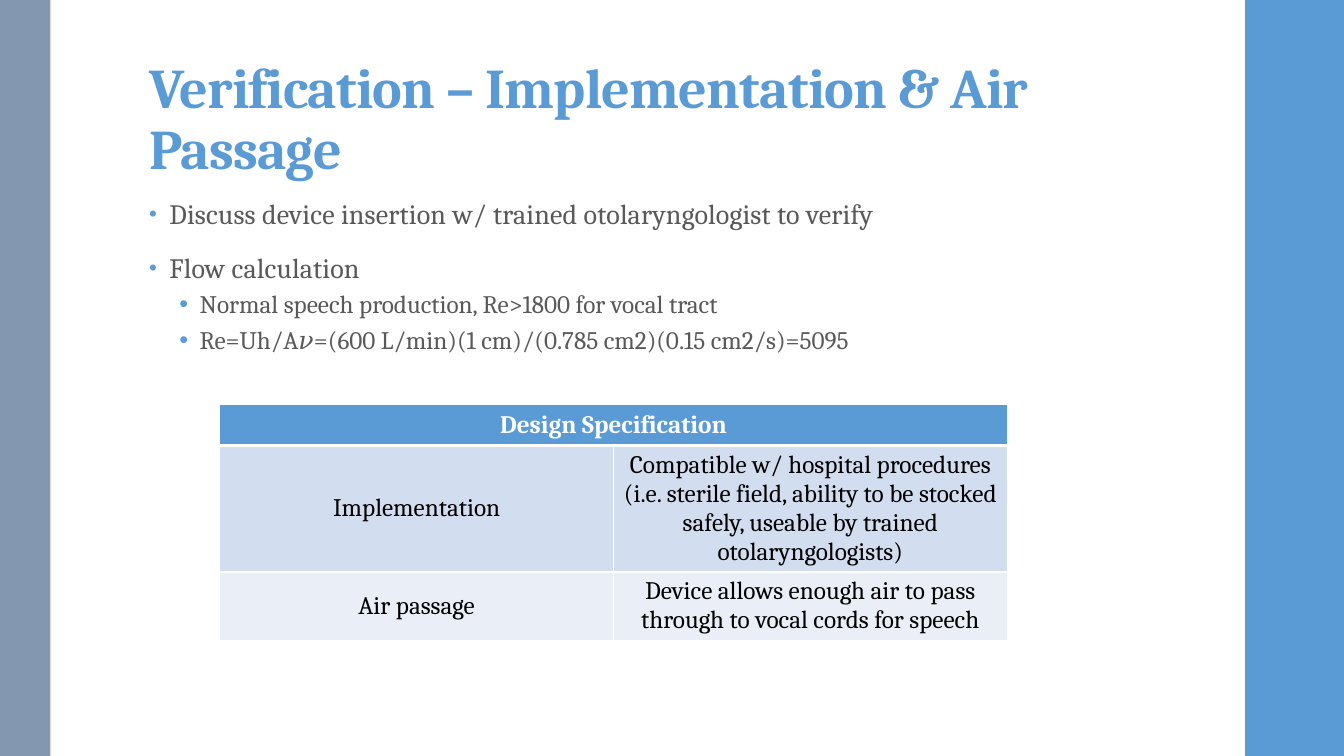
from lxml import etree
from pptx import Presentation
from pptx.dml.color import RGBColor
from pptx.enum.shapes import MSO_SHAPE
from pptx.enum.text import MSO_ANCHOR, MSO_AUTO_SIZE, PP_ALIGN
from pptx.oxml.ns import qn
from pptx.util import Inches, Pt

RECTANGLE = MSO_SHAPE.RECTANGLE
BOTTOM, MIDDLE, TOP = MSO_ANCHOR.BOTTOM, MSO_ANCHOR.MIDDLE, MSO_ANCHOR.TOP
LEFT, CENTER = PP_ALIGN.LEFT, PP_ALIGN.CENTER
NO_AUTOFIT = MSO_AUTO_SIZE.NONE

WIDTH, HEIGHT = 13.33, 7.5
CONTENT_LEFT = 1.38
FONT = "Cambria"
COLORS = {
    "accent": "5B9BD5",
    "left_band": "8497B0",
    "body": "595959",
    "white": "FFFFFF",
    "black": "000000",
    "row_dark": "D2DEEF",
    "row_light": "EAEFF7",
}

TITLE = "Verification – Implementation & Air Passage"
POINTS = [
    (0, "Discuss device insertion w/ trained otolaryngologist to verify"),
    (0, "Flow calculation"),
    (1, "Normal speech production, Re>1800 for vocal tract"),
    (1, "Re=Uh/A𝜈=(600 L/min)(1 cm)/(0.785 cm2)(0.15 cm2/s)=5095"),
]
# Per outline level: size, tracking, line spacing, before, after, indent, bullet %
LEVELS = [
    (20, 0.1, 0.95, 14, 2, 0.2, 80),
    (18, 0, 0.9, 3, 3, 0.5, 100),
]
HANGING = 0.2
SPEC_HEADING = "Design Specification"
SPECS = [
    ("Implementation",
     "Compatible w/ hospital procedures (i.e. sterile field, ability to be "
     "stocked safely, useable by trained otolaryngologists)"),
    ("Air passage",
     "Device allows enough air to pass through to vocal cords for speech"),
]
SPEC_ROW_HEIGHTS = [0.41, 1.25, 0.67]


def rgb(name):
    return RGBColor.from_string(COLORS[name])


def add_band(slide, left, width, color):
    band = slide.shapes.add_shape(
        RECTANGLE, Inches(left), 0, Inches(width), Inches(HEIGHT))
    band.shadow.inherit = False
    band.fill.solid()
    band.fill.fore_color.rgb = rgb(color)
    band.line.fill.background()


def add_run(paragraph, text, size, color, bold=False, tracking=0):
    run = paragraph.add_run()
    run.text = text
    run.font.name = FONT
    run.font.size = Pt(size)
    run.font.bold = bold
    run.font.color.rgb = rgb(color)
    run.font._element.set("spc", str(round(tracking * 100)))


def place(placeholder, left, top, width, height, anchor):
    placeholder.left, placeholder.top = Inches(left), Inches(top)
    placeholder.width, placeholder.height = Inches(width), Inches(height)
    frame = placeholder.text_frame
    frame.word_wrap = True
    frame.auto_size = NO_AUTOFIT
    frame.vertical_anchor = anchor
    return frame


def fill_title(slide):
    frame = place(slide.shapes.title, CONTENT_LEFT, 0.32, 10.6, 1.53, BOTTOM)
    frame.margin_top = Inches(0.03)
    heading = frame.paragraphs[0]
    heading.alignment = LEFT
    heading.line_spacing = 0.9
    add_run(heading, TITLE, 40, "accent", bold=True, tracking=-0.5)


def add_bullet(paragraph, indent, percent):
    props = paragraph._p.get_or_add_pPr()
    props.set("marL", str(Inches(indent)))
    props.set("indent", str(-Inches(HANGING)))
    color = etree.SubElement(props, qn("a:buClr"))
    etree.SubElement(color, qn("a:srgbClr"), val=COLORS["accent"])
    etree.SubElement(props, qn("a:buSzPct"), val=str(percent * 1000))
    etree.SubElement(props, qn("a:buFont"), typeface="Arial")
    etree.SubElement(props, qn("a:buChar"), char="•")


def fill_points(slide):
    frame = place(slide.placeholders[1], CONTENT_LEFT, 1.92, 9.4, 2.38, TOP)
    for index, (level, text) in enumerate(POINTS):
        size, tracking, spacing, before, after, indent, percent = LEVELS[level]
        point = frame.add_paragraph() if index else frame.paragraphs[0]
        point.level = level
        point.line_spacing = spacing
        point.space_before, point.space_after = Pt(before), Pt(after)
        add_bullet(point, indent, percent)
        add_run(point, text, size, "body", tracking=tracking)


def set_borders(cell, top, bottom):
    """Draw white cell borders; top and bottom are widths in points."""
    props = cell._tc.get_or_add_tcPr()
    sides = [("a:lnL", 1), ("a:lnR", 1), ("a:lnT", top), ("a:lnB", bottom)]
    for position, (tag, width) in enumerate(sides):
        line = etree.Element(qn(tag), w=str(Pt(width)))
        fill = etree.SubElement(line, qn("a:solidFill"))
        etree.SubElement(fill, qn("a:srgbClr"), val=COLORS["white"])
        props.insert(position, line)


def style_cell(cell, fill, top=1, bottom=1):
    cell.fill.solid()
    cell.fill.fore_color.rgb = rgb(fill)
    cell.vertical_anchor = MIDDLE
    set_borders(cell, top, bottom)


def write_cell(cell, text, color, bold=False):
    paragraph = cell.text_frame.paragraphs[0]
    paragraph.alignment = CENTER
    add_run(paragraph, text, 18, color, bold)


def add_spec_table(slide):
    specs = slide.shapes.add_table(
        len(SPECS) + 1, 2, Inches(2.18), Inches(4.01),
        Inches(7.81), Inches(sum(SPEC_ROW_HEIGHTS))).table
    for row, height in zip(specs.rows, SPEC_ROW_HEIGHTS):
        row.height = Inches(height)

    for column in range(2):
        style_cell(specs.cell(0, column), "accent", bottom=3)
    specs.cell(0, 0).merge(specs.cell(0, 1))
    write_cell(specs.cell(0, 0), SPEC_HEADING, "white", bold=True)

    for row, texts in enumerate(SPECS, start=1):
        fill = "row_dark" if row % 2 else "row_light"
        for column, text in enumerate(texts):
            cell = specs.cell(row, column)
            style_cell(cell, fill, top=3 if row == 1 else 1)
            write_cell(cell, text, "black")


def main():
    deck = Presentation()
    deck.slide_width, deck.slide_height = Inches(WIDTH), Inches(HEIGHT)
    slide = deck.slides.add_slide(deck.slide_layouts[1])
    add_band(slide, WIDTH - 0.98, 0.98, "accent")
    add_band(slide, 0, 0.5, "left_band")
    fill_title(slide)
    fill_points(slide)
    add_spec_table(slide)
    deck.save("out.pptx")


if __name__ == "__main__":
    main()
